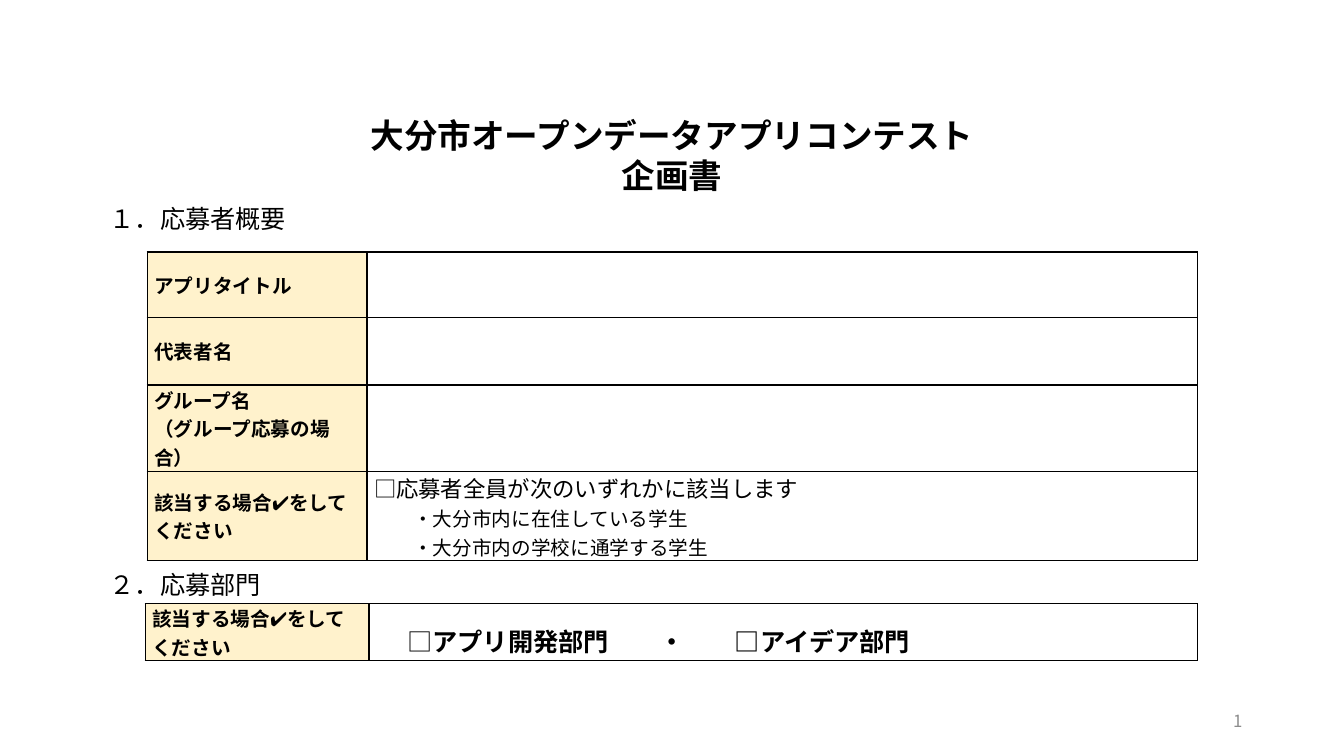
from lxml import etree
from pptx import Presentation, util as u
from pptx.dml.color import RGBColor
from pptx.enum import text
from pptx.oxml.ns import qn

FONT = "Noto Sans CJK JP"
BLACK, GREY, CREAM = "000000", "8C8C8C", "FFF2CC"
CHECK_LABEL = "該当する場合✔をしてください"
ALIGN, ANCHOR = text.PP_ALIGN, text.MSO_ANCHOR


def color(hex_string):
    return RGBColor.from_string(hex_string)


def inches(box):
    return [u.Inches(length) for length in box]


def style(paragraph, size, bold=False, ink=BLACK, align=ALIGN.LEFT):
    font = paragraph.font
    font.name, font.size, font.bold = FONT, u.Pt(size), bold
    font.color.rgb = color(ink)
    # Japanese glyphs take the East Asian typeface
    latin = font._element.find(qn("a:latin"))
    latin.addnext(etree.Element(qn("a:ea"), typeface=FONT))
    paragraph.alignment = align


def write(frame, lines, size, **look):
    frame.word_wrap = True
    frame.text = "\n".join(lines)
    for paragraph in frame.paragraphs:
        style(paragraph, size, **look)


def add_title(slide, box, lines):
    title = slide.shapes.title
    title.left, title.top, title.width, title.height = inches(box)
    frame = title.text_frame
    frame.auto_size = text.MSO_AUTO_SIZE.NONE
    frame.vertical_anchor = ANCHOR.TOP
    write(frame, lines, 24, bold=True, align=ALIGN.CENTER)


def add_text(slide, box, line, size, anchor=ANCHOR.TOP, **look):
    frame = slide.shapes.add_textbox(*inches(box)).text_frame
    frame.vertical_anchor = anchor
    write(frame, [line], size, **look)


def format_cell(cell, fill=None):
    cell.margin_left = cell.margin_right = u.Inches(0.07)
    cell.margin_top = cell.margin_bottom = 0
    cell.vertical_anchor = ANCHOR.MIDDLE
    properties = cell._tc.get_or_add_tcPr()
    for side in ("lnL", "lnR", "lnT", "lnB"):
        line = etree.SubElement(properties, qn(f"a:{side}"), w=str(u.Pt(1)))
        solid = etree.SubElement(line, qn("a:solidFill"))
        etree.SubElement(solid, qn("a:srgbClr"), val=BLACK)
    if fill:
        cell.fill.solid()
        cell.fill.fore_color.rgb = color(fill)
    else:
        cell.fill.background()


def add_form(slide, left, top, columns, rows, labels):
    """Place a form table: shaded labels on the left, answers on the right."""
    box = inches((left, top, sum(columns), sum(rows)))
    table = slide.shapes.add_table(len(rows), len(columns), *box).table
    table.first_row = table.horz_banding = False
    for column, width in zip(table.columns, columns):
        column.width = u.Inches(width)
    for row, height, label in zip(table.rows, rows, labels):
        row.height = u.Inches(height)
        label_cell, answer_cell = row.cells
        format_cell(label_cell, CREAM)
        format_cell(answer_cell)
        write(label_cell.text_frame, label, 14, bold=True)
    return table


def indent(paragraph, length):
    paragraph._p.get_or_add_pPr().set("marL", str(u.Inches(length)))


def add_applicant_form(slide, left, top):
    labels = [["アプリタイトル"], ["代表者名"],
              ["グループ名", "（グループ応募の場合）"], [CHECK_LABEL]]
    table = add_form(slide, left, top, (2.18, 8.24),
                     (0.65, 0.67, 0.86, 0.88), labels)
    frame = table.cell(3, 1).text_frame
    write(frame, ["□応募者全員が次のいずれかに該当します",
                  "・大分市内に在住している学生",
                  "・大分市内の学校に通学する学生"], 14)
    heading, *conditions = frame.paragraphs
    heading.font.size = u.Pt(16)
    for condition in conditions:
        indent(condition, 0.39)


def add_division_form(slide, left, top):
    table = add_form(slide, left, top, (2.22, 8.22), (0.56,), [[CHECK_LABEL]])
    cell = table.cell(0, 1)
    cell.vertical_anchor = ANCHOR.TOP
    paragraph = cell.text_frame.paragraphs[0]
    style(paragraph, 18)
    paragraph.line_spacing = 1.5
    indent(paragraph, 0.31)
    for words, bold in (("□", False), ("アプリ開発部門　　・　　□アイデア部門", True)):
        run = paragraph.add_run()
        run.text, run.font.bold = words, bold


def main():
    presentation = Presentation()
    presentation.slide_width, presentation.slide_height = inches((13.33, 7.5))
    slide = presentation.slides.add_slide(presentation.slide_layouts[5])

    # Title
    add_title(slide, (2.38, 1.09, 8.57, 0.91),
              ["大分市オープンデータアプリコンテスト", "企画書"])
    # Applicant section
    add_text(slide, (0.99, 1.97, 3.58, 0.4), "１．応募者概要", 18)
    add_applicant_form(slide, 1.46, 2.5)
    # Division section
    add_text(slide, (0.99, 5.6, 1.87, 0.4), "２．応募部門", 18)
    add_division_form(slide, 1.44, 5.99)
    # Page number
    add_text(slide, (9.42, 6.95, 3, 0.4), "1", 12, ANCHOR.MIDDLE,
             ink=GREY, align=ALIGN.RIGHT)

    presentation.save("out.pptx")


if __name__ == "__main__":
    main()
